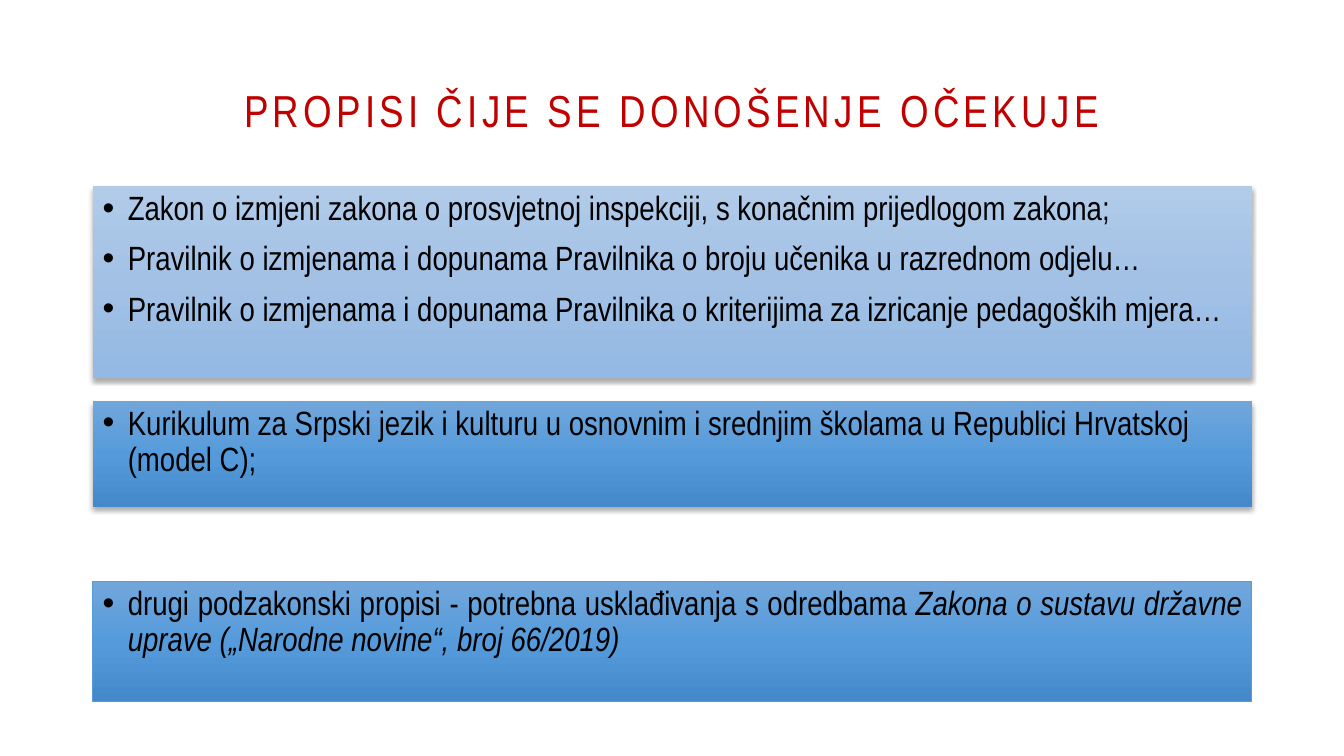
"""Build the slide on regulations whose adoption is expected."""
import copy

import pptx
import pptx.dml.color
import pptx.enum.shapes
import pptx.enum.text
import pptx.oxml
import pptx.oxml.ns
import pptx.util

Pt = pptx.util.Pt
Align = pptx.enum.text.PP_ALIGN
Anchor = pptx.enum.text.MSO_ANCHOR


def rgb(value):
    return pptx.dml.color.RGBColor.from_string(value)


def add_xml(parent, xml):
    namespace = pptx.oxml.ns.nsdecls("a")
    parent.append(pptx.oxml.parse_xml(xml.replace(" ", f" {namespace} ", 1)))


class RegulationSlide:
    FONT = "Arial Narrow"
    LEFT, WIDTH = 66.24, 828
    INDENT = 18

    def __init__(self, slide):
        self.slide = slide

    def style(self, run, size, color, italic=False):
        run.font.name = self.FONT
        run.font.size = Pt(size)
        run.font.color.rgb = rgb(color)
        if italic:
            run.font.italic = True

    def heading(self, top, height, wording):
        title = self.slide.shapes.add_textbox(Pt(self.LEFT), Pt(top), Pt(self.WIDTH), Pt(height))
        frame = title.text_frame
        frame.word_wrap = True
        frame.vertical_anchor = Anchor.MIDDLE
        frame.text = wording
        line = frame.paragraphs[0]
        line.alignment = Align.CENTER
        line.line_spacing = 0.9
        self.style(line.runs[0], 32, "C00000")
        line.runs[0].font._element.set("spc", "300")

    def gradient(self, panel, colors):
        panel.fill.gradient()
        panel.fill.gradient_angle = 270
        stop_list = panel._element.spPr.find(".//" + pptx.oxml.ns.qn("a:gsLst"))
        stop_list.append(copy.deepcopy(stop_list[0]))
        for index, (stop, color) in enumerate(zip(panel.fill.gradient_stops, colors)):
            stop.position = index / 2
            stop.color.rgb = rgb(color)

    def shadow(self, panel):
        effects = panel._element.spPr.find(pptx.oxml.ns.qn("a:effectLst"))
        add_xml(effects, f'<a:outerShdw blurRad="{Pt(3.5)}" dist="{Pt(2.2)}" dir="5400000" '
                         'algn="ctr" rotWithShape="0"><a:srgbClr val="000000">'
                         '<a:alpha val="32000"/></a:srgbClr></a:outerShdw>')

    def panel(self, top, height, colors, items, alignment, border=None):
        panel = self.slide.shapes.add_shape(
            pptx.enum.shapes.MSO_SHAPE.RECTANGLE,
            Pt(self.LEFT), Pt(top), Pt(self.WIDTH), Pt(height))
        panel.shadow.inherit = False
        self.gradient(panel, colors)
        if border:
            panel.line.color.rgb = rgb(border)
            panel.line.width = Pt(0.5)
        else:
            panel.line.fill.background()
            self.shadow(panel)
        frame = panel.text_frame
        frame.word_wrap = True
        frame.vertical_anchor = Anchor.TOP
        frame.text = "\n".join(plain for plain, cited in items)
        for index, (line, (plain, cited)) in enumerate(zip(frame.paragraphs, items)):
            self.bullet(line, alignment, 10 if index else 0)
            self.style(line.runs[0], 24, "000000")
            if cited:
                citation = line.add_run()
                citation.text = cited
                self.style(citation, 24, "000000", italic=True)

    def bullet(self, line, alignment, space_before):
        properties = line._p.get_or_add_pPr()
        properties.set("marL", str(Pt(self.INDENT)))
        properties.set("indent", str(-Pt(self.INDENT)))
        add_xml(properties, '<a:buFont typeface="Arial"/>')
        add_xml(properties, '<a:buChar char="•"/>')
        line.alignment = alignment
        line.line_spacing = 0.9
        line.space_before = Pt(space_before)


def main():
    deck = pptx.Presentation()
    deck.slide_width, deck.slide_height = Pt(960), Pt(540)
    regulations = RegulationSlide(deck.slides.add_slide(deck.slide_layouts[6]))
    pale_blue = ("B1CBE9", "A3C1E5", "93B9E4")
    strong_blue = ("71A6DB", "559BDB", "448ACA")

    regulations.heading(28.8, 104.4, "PROPISI ČIJE SE DONOŠENJE OČEKUJE")
    regulations.panel(133.2, 136.8, pale_blue, [
        ("Zakon o izmjeni zakona o prosvjetnoj inspekciji, s konačnim prijedlogom zakona;", ""),
        ("Pravilnik o izmjenama i dopunama Pravilnika o broju učenika u razrednom odjelu…", ""),
        ("Pravilnik o izmjenama i dopunama Pravilnika o kriterijima za izricanje "
         "pedagoških mjera…", ""),
    ], Align.JUSTIFY)
    regulations.panel(415.44, 85.68, strong_blue, [
        ("drugi podzakonski propisi - potrebna usklađivanja s odredbama ",
         "Zakona o sustavu državne uprave („Narodne novine“, broj 66/2019)"),
    ], Align.JUSTIFY, border="5B9BD5")
    regulations.panel(286.56, 75.6, strong_blue, [
        ("Kurikulum za Srpski jezik i kulturu u osnovnim i srednjim školama "
         "u Republici Hrvatskoj (model C);", ""),
    ], Align.LEFT)
    deck.save("out.pptx")


if __name__ == "__main__":
    main()
